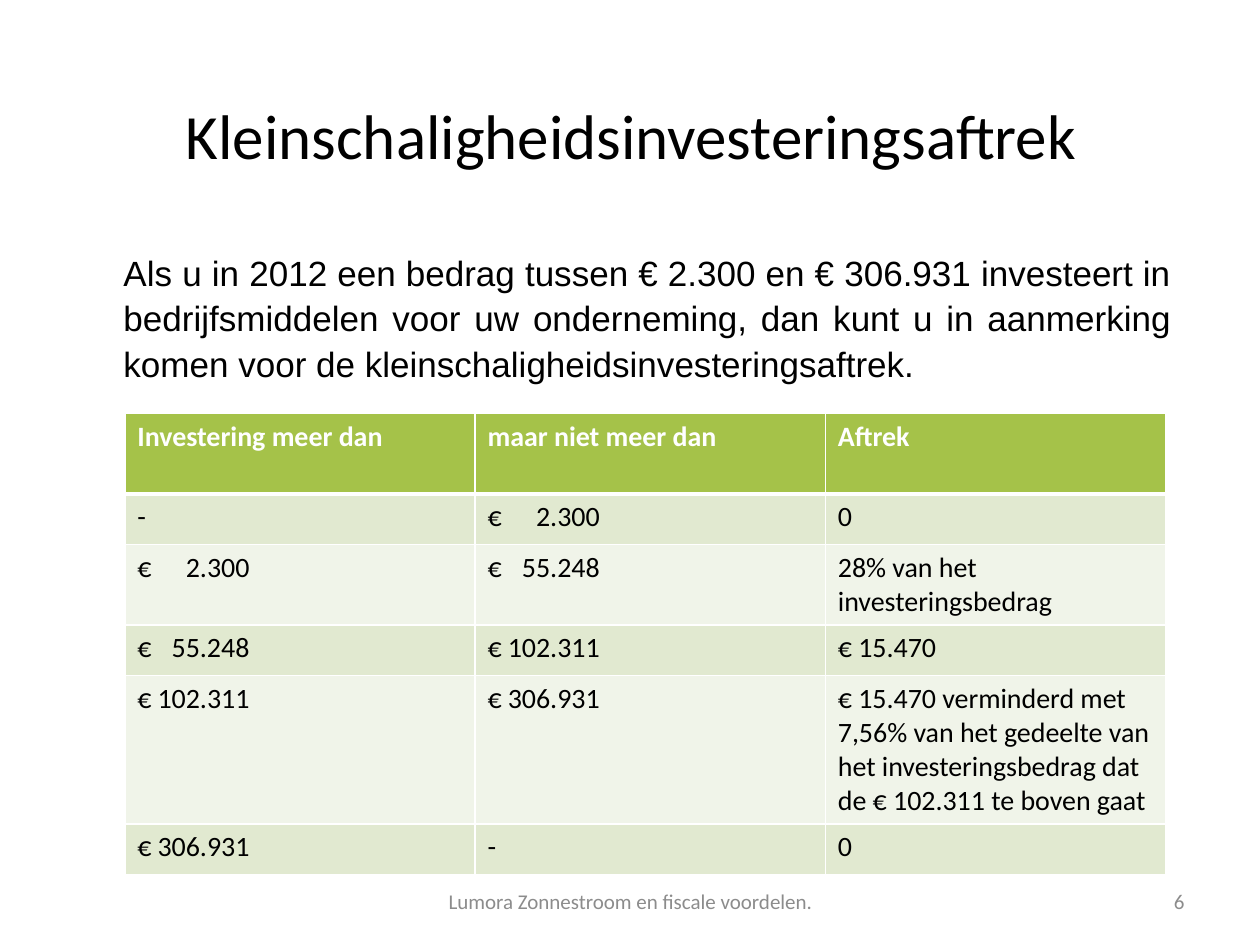
from lxml import etree
from pptx import Presentation
from pptx.dml.color import RGBColor
from pptx.enum import text as t
from pptx.oxml.ns import qn
from pptx.util import Inches, Pt

COLORS = {"ink": "000000", "muted": "8C8C8C", "white": "FFFFFF",
          "header": "A5C249", "odd": "E1E9D0", "even": "F0F4E9"}

TITLE = "Kleinschaligheidsinvesteringsaftrek"
INTRO = ("Als u in 2012 een bedrag tussen € 2.300 en € 306.931 investeert in "
         "bedrijfsmiddelen voor uw onderneming, dan kunt u in aanmerking komen "
         "voor de kleinschaligheidsinvesteringsaftrek.")
FOOTER = "Lumora Zonnestroom en fiscale voordelen."
PAGE = "6"
DEDUCTIONS = [
    ("Investering meer dan", "maar niet meer dan", "Aftrek"),
    ("-", "€\t2.300", "0"),
    ("€\t2.300", "€\t55.248", "28% van het investeringsbedrag"),
    ("€\t55.248", "€\t102.311", "€ 15.470"),
    ("€\t102.311", "€\t306.931",
     "€ 15.470 verminderd met 7,56% van het gedeelte van het "
     "investeringsbedrag dat de € 102.311 te boven gaat"),
    ("€\t306.931", "-", "0"),
]
COLUMN_WIDTHS = (2.78, 2.78, 2.7)
ROW_HEIGHTS = (0.64, 0.4, 0.64, 0.4, 1.18, 0.4)
AMOUNT_EDGE = 0.89


def rgb(name):
    return RGBColor.from_string(COLORS[name])


def style(paragraph, size, color, font="Calibri", bold=False):
    paragraph.font.size = Pt(size)
    paragraph.font.name = font
    paragraph.font.bold = bold
    paragraph.font.color.rgb = rgb(color)


def add_text(slide, box, words, size, color, align, font="Calibri",
             anchor=t.MSO_ANCHOR.MIDDLE):
    frame = slide.shapes.add_textbox(*map(Inches, box)).text_frame
    frame.word_wrap = True
    frame.vertical_anchor = anchor
    frame.text = words
    paragraph = frame.paragraphs[0]
    paragraph.alignment = align
    style(paragraph, size, color, font)
    return frame


def add_borders(cell, bottom_width):
    props = cell._tc.get_or_add_tcPr()
    widths = {"a:lnL": 1, "a:lnR": 1, "a:lnT": 1, "a:lnB": bottom_width}
    for index, (side, width) in enumerate(widths.items()):
        line = etree.Element(qn(side), w=str(Pt(width)))
        fill = etree.SubElement(line, qn("a:solidFill"))
        etree.SubElement(fill, qn("a:srgbClr"), val=COLORS["white"])
        props.insert(index, line)


def add_amount_tab(paragraph):
    tabs = etree.SubElement(paragraph._p.get_or_add_pPr(), qn("a:tabLst"))
    etree.SubElement(tabs, qn("a:tab"), pos=str(Inches(AMOUNT_EDGE)), algn="r")


def add_deductions(slide):
    table = slide.shapes.add_table(
        len(DEDUCTIONS), len(COLUMN_WIDTHS), Inches(0.99), Inches(3.28),
        Inches(sum(COLUMN_WIDTHS)), Inches(sum(ROW_HEIGHTS))).table
    for column, width in zip(table.columns, COLUMN_WIDTHS):
        column.width = Inches(width)
    for row, (height, entries) in enumerate(zip(ROW_HEIGHTS, DEDUCTIONS)):
        table.rows[row].height = Inches(height)
        is_header = row == 0
        band = "header" if is_header else "odd" if row % 2 else "even"
        for col, entry in enumerate(entries):
            cell = table.cell(row, col)
            cell.text = entry
            cell.fill.solid()
            cell.fill.fore_color.rgb = rgb(band)
            add_borders(cell, 3 if is_header else 1)
            paragraph = cell.text_frame.paragraphs[0]
            if "\t" in entry:
                add_amount_tab(paragraph)
            style(paragraph, 16, "white" if is_header else "ink", bold=is_header)


def main():
    deck = Presentation()
    deck.slide_width, deck.slide_height = Inches(10), Inches(7.5)
    slide = deck.slides.add_slide(deck.slide_layouts[6])

    add_text(slide, (0.51, 0.44, 9, 1.25), TITLE, 36, "ink", t.PP_ALIGN.CENTER)
    intro = add_text(slide, (0.98, 1.97, 8.32, 1.15), INTRO, 20, "ink",
                     t.PP_ALIGN.JUSTIFY, "Arial", t.MSO_ANCHOR.TOP)
    intro.margin_left = intro.margin_right = intro.margin_top = intro.margin_bottom = 0
    intro.paragraphs[0].line_spacing = 1.08
    add_deductions(slide)
    add_text(slide, (3.42, 6.95, 3.17, 0.4), FOOTER, 12, "muted", t.PP_ALIGN.CENTER)
    add_text(slide, (7.17, 6.95, 2.33, 0.4), PAGE, 12, "muted", t.PP_ALIGN.RIGHT)
    deck.save("out.pptx")


if __name__ == "__main__":
    main()
